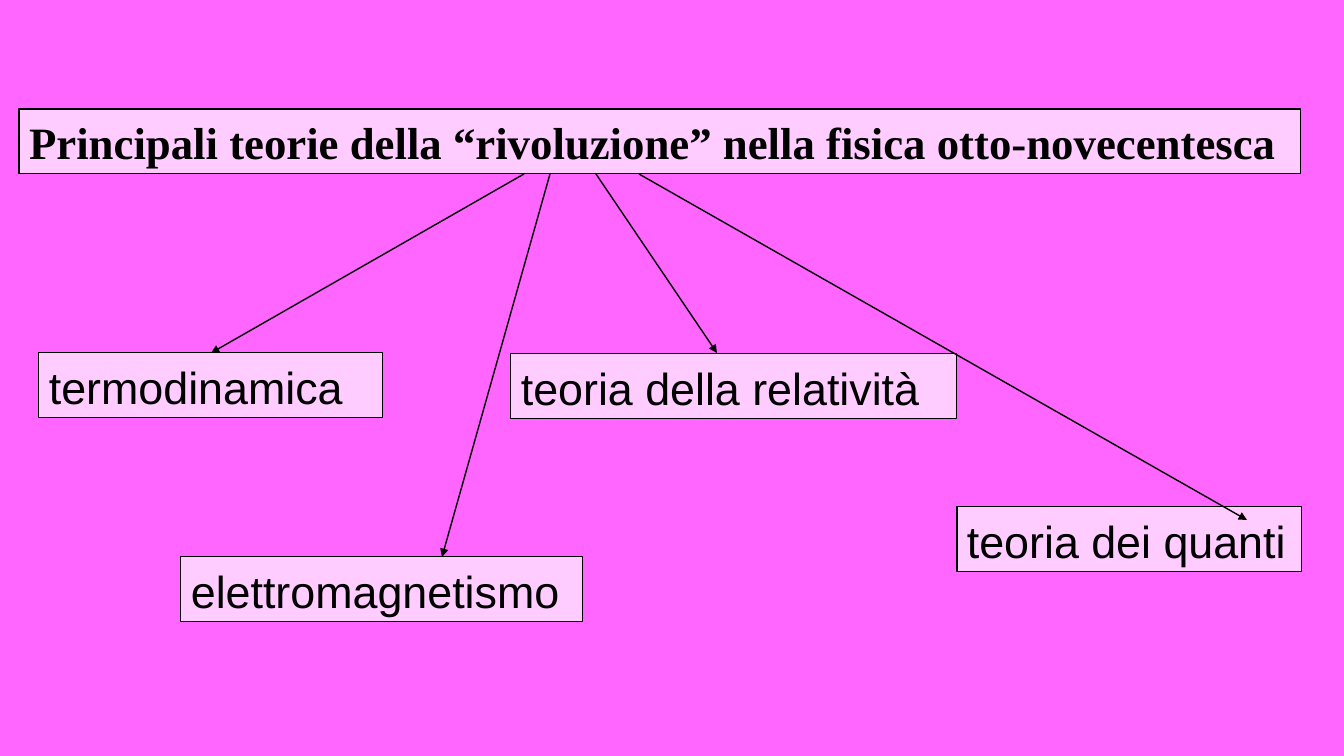
from lxml.etree import SubElement
from pptx import Presentation
from pptx.dml.color import RGBColor
from pptx.enum.shapes import MSO_CONNECTOR as Connector
from pptx.enum.text import MSO_ANCHOR as Anchor, MSO_AUTO_SIZE as AutoSize, PP_ALIGN as Align
from pptx.oxml.ns import qn
from pptx.util import Emu, Pt


def px(value):
    return Emu(round(value * 9144000 / 1008))


def color(hex_string):
    return RGBColor.from_string(hex_string)


class TheoryMap:
    background = "FF66FF"
    panel = "FFCCFF"
    ink = "000000"
    text_size = Pt(32)

    def __init__(self, deck):
        self.slide = deck.slides.add_slide(deck.slide_layouts[5])
        fill = self.slide.background.fill
        fill.solid()
        fill.fore_color.rgb = color(self.background)

    def style_box(self, box, text, font_name, bold):
        box.fill.solid()
        box.fill.fore_color.rgb = color(self.panel)
        box.line.color.rgb = color(self.ink)
        box.line.width = Pt(0.75)
        frame = box.text_frame
        frame.text = text
        frame.word_wrap = True
        frame.auto_size = AutoSize.NONE
        frame.vertical_anchor = Anchor.BOTTOM
        para = frame.paragraphs[0]
        para.alignment = Align.LEFT
        for span in para.runs:
            span.font.name = font_name
            span.font.size = self.text_size
            span.font.bold = bold
            span.font.color.rgb = color(self.ink)

    def title(self, text, left, top, width, height):
        box = self.slide.shapes.title
        box.left, box.top, box.width, box.height = map(px, (left, top, width, height))
        self.style_box(box, text, "Times New Roman", True)

    def theory(self, text, left, top, width, height):
        box = self.slide.shapes.add_textbox(*map(px, (left, top, width, height)))
        self.style_box(box, text, "Arial", False)

    def arrow(self, start_x, start_y, end_x, end_y):
        arrow = self.slide.shapes.add_connector(
            Connector.STRAIGHT, *map(px, (start_x, start_y, end_x, end_y)))
        arrow.line.color.rgb = color(self.ink)
        arrow.line.width = Pt(1)
        SubElement(arrow.line._get_or_add_ln(), qn("a:tailEnd"), type="triangle")
        SubElement(arrow._element.spPr, qn("a:effectLst"))


def main():
    deck = Presentation()
    deck.slide_width, deck.slide_height = px(1344), px(756)
    theory_map = TheoryMap(deck)
    box_height = 65
    theory_map.title("Principali teorie della “rivoluzione” nella fisica otto-novecentesca",
                     19, 109, 1282, box_height)
    for text, left, top, width in (
        ("termodinamica", 39, 353, 344),
        ("elettromagnetismo", 181, 557, 402),
        ("teoria della relatività", 511, 354, 446),
        ("teoria dei quanti", 957, 507, 345),
    ):
        theory_map.theory(text, left, top, width, box_height)
    for start_x, end_x, end_y in (
        (524, 211, 353), (550, 442, 557), (596, 717, 353), (639, 1247, 520),
    ):
        theory_map.arrow(start_x, 174, end_x, end_y)
    deck.save("out.pptx")


if __name__ == "__main__":
    main()
